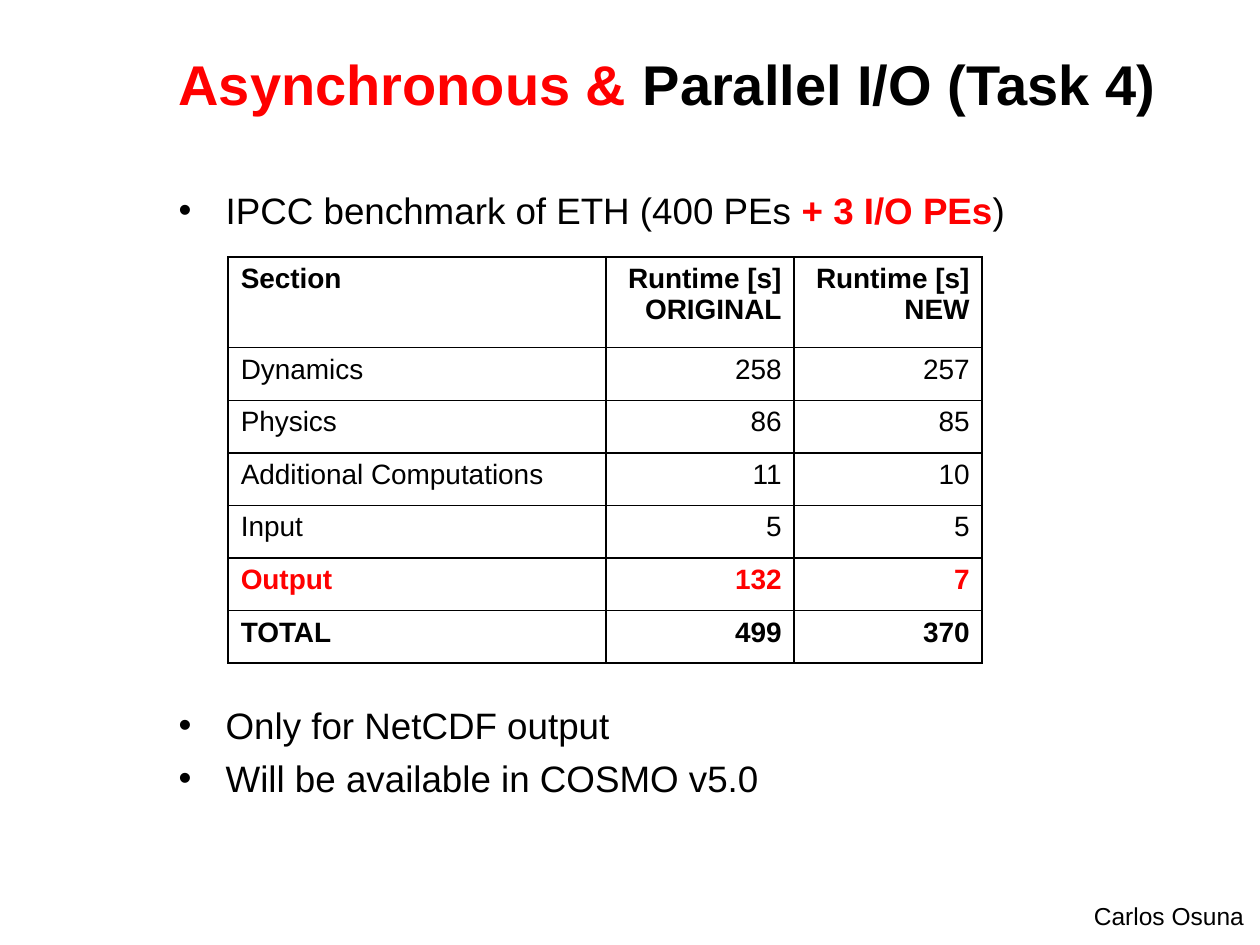
from lxml import etree
from pptx import Presentation
from pptx import util as u
from pptx.dml.color import RGBColor
from pptx.enum import text
from pptx.oxml import ns

COLOURS = {"ink": "000000", "accent": "FF0000", "paper": "FFFFFF"}


class SlideBuilder:
    font = "Arial"

    def __init__(self, page):
        self.page = page

    def add_run(self, para, words, size, colour="ink", bold=False):
        span = para.add_run()
        span.text = words
        span.font.name = self.font
        span.font.size = u.Pt(size)
        span.font.bold = bold
        span.font.color.rgb = RGBColor.from_string(COLOURS[colour])

    def add_bullet(self, para, indent):
        props = para._p.get_or_add_pPr()
        props.set("marL", str(indent))
        props.set("indent", str(-indent))
        etree.SubElement(props, ns.qn("a:buFont"), typeface=self.font)
        etree.SubElement(props, ns.qn("a:buChar"), char="•")

    def add_text(self, area, paras, size, top_inset=None, bullets=False,
                 gaps=None, align=text.PP_ALIGN.LEFT, wrap=True):
        """Each paragraph is a list of (words, colour, bold) runs."""
        box = self.page.shapes.add_textbox(*map(u.Cm, area))
        frame = box.text_frame
        frame.word_wrap = wrap
        if top_inset is not None:
            frame.margin_left = frame.margin_right = frame.margin_bottom = 0
            frame.margin_top = u.Cm(top_inset)
        for index, runs in enumerate(paras):
            para = frame.add_paragraph() if index else frame.paragraphs[0]
            para.alignment = align
            if index and gaps:
                para.space_before = u.Pt(gaps[index - 1])
            if bullets:
                self.add_bullet(para, u.Cm(0.95))
            for words, colour, bold in runs:
                self.add_run(para, words, size, colour, bold)

    def add_borders(self, cell):
        props = cell._tc.get_or_add_tcPr()
        for place, side in enumerate(("lnL", "lnR", "lnT", "lnB")):
            line = etree.Element(ns.qn("a:" + side), w=str(u.Pt(1)))
            fill = etree.SubElement(line, ns.qn("a:solidFill"))
            etree.SubElement(fill, ns.qn("a:srgbClr"), val=COLOURS["ink"])
            props.insert(place, line)

    def add_table(self, left, top, widths, heights, rows, size, styles):
        """styles maps a row label to its (colour, bold)."""
        frame = self.page.shapes.add_table(
            len(rows), len(widths), u.Cm(left), u.Cm(top),
            u.Cm(sum(widths)), u.Cm(sum(heights)))
        table = frame.table
        for column, width in zip(table.columns, widths):
            column.width = u.Cm(width)
        for line, height in zip(table.rows, heights):
            line.height = u.Cm(height)
        for r, row in enumerate(rows):
            colour, bold = styles.get(row[0], ("ink", False))
            for c, value in enumerate(row):
                cell = table.cell(r, c)
                cell.fill.solid()
                cell.fill.fore_color.rgb = RGBColor.from_string(COLOURS["paper"])
                self.add_borders(cell)
                for index, words in enumerate(value.split("\n")):
                    frame = cell.text_frame
                    para = frame.add_paragraph() if index else frame.paragraphs[0]
                    para.alignment = text.PP_ALIGN.RIGHT if c else text.PP_ALIGN.LEFT
                    self.add_run(para, words, size, colour, bold)


def main():
    deck = Presentation()
    deck.slide_width, deck.slide_height = u.Cm(25.4), u.Cm(19.05)
    builder = SlideBuilder(deck.slides.add_slide(deck.slide_layouts[6]))

    # Title
    builder.add_text((3.6, 0.89, 20.73, 2.74), [[
        ("Asynchronous & ", "accent", True),
        ("Parallel I/O (Task 4)", "ink", True),
    ]], 32, top_inset=0.1)

    # Bullets, with room for the table after the first
    builder.add_text((3.6, 3.68, 20.75, 13.23), [
        [("IPCC benchmark of ETH (400 PEs ", "ink", False),
         ("+ 3 I/O PEs", "accent", True),
         (")", "ink", False)],
        [("Only for NetCDF output", "ink", False)],
        [("Will be available in COSMO v5.0", "ink", False)],
    ], 21, top_inset=0.1, bullets=True, gaps=(269.5, 5))

    # Runtime table
    rows = [
        ("Section", "Runtime [s]\nORIGINAL", "Runtime [s]\nNEW"),
        ("Dynamics", "258", "257"),
        ("Physics", "86", "85"),
        ("Additional Computations", "11", "10"),
        ("Input", "5", "5"),
        ("Output", "132", "7"),
        ("TOTAL", "499", "370"),
    ]
    builder.add_table(
        4.6, 5.18, (7.62, 3.79, 3.79), [1.83] + [1.06] * (len(rows) - 1), rows, 16,
        {"Section": ("ink", True), "Output": ("accent", True), "TOTAL": ("ink", True)})

    # Author
    builder.add_text((21.77, 18.03, 3.56, 0.86), [[("Carlos Osuna", "ink", False)]],
                     14, align=text.PP_ALIGN.RIGHT, wrap=False)

    deck.save("out.pptx")


if __name__ == "__main__":
    main()
